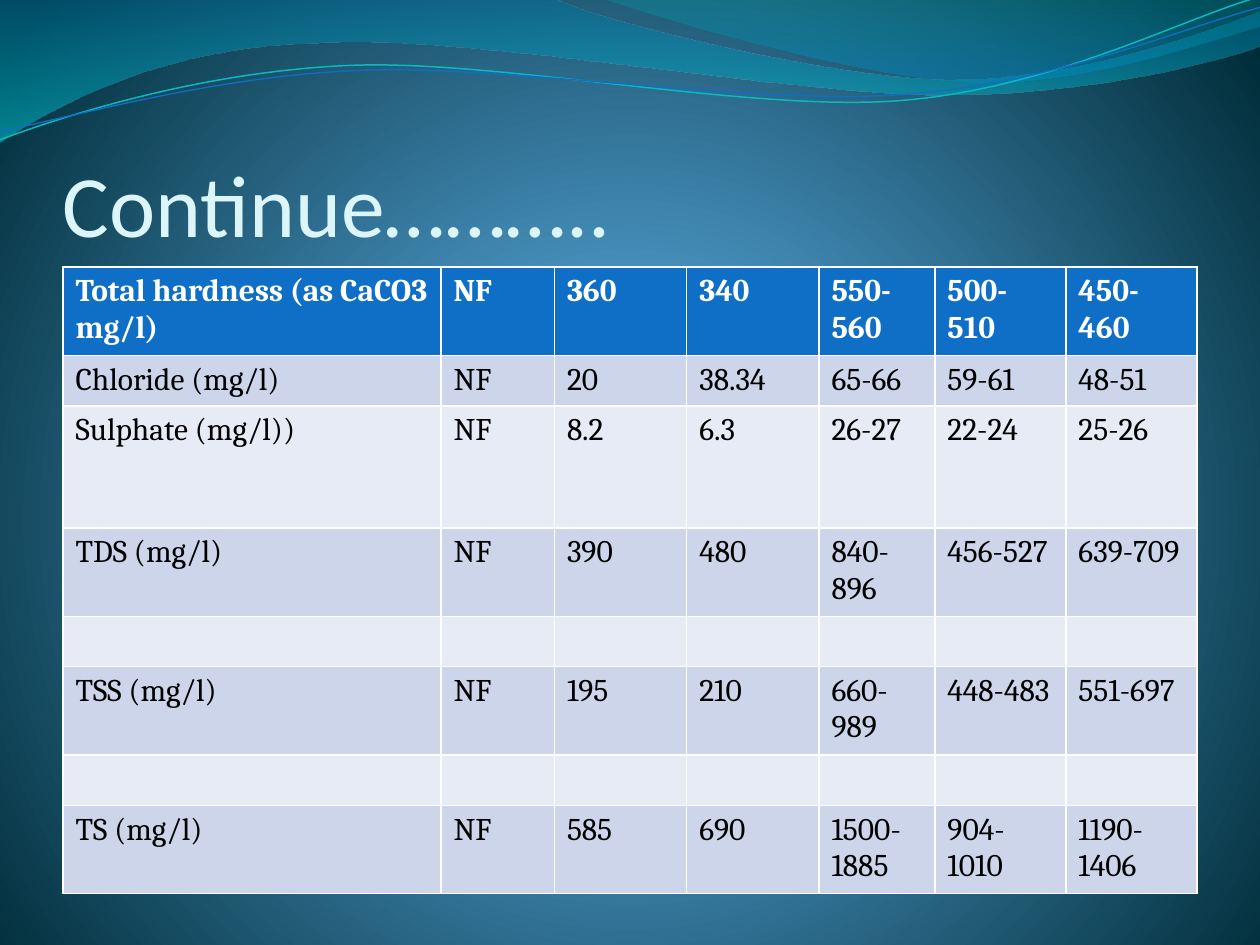
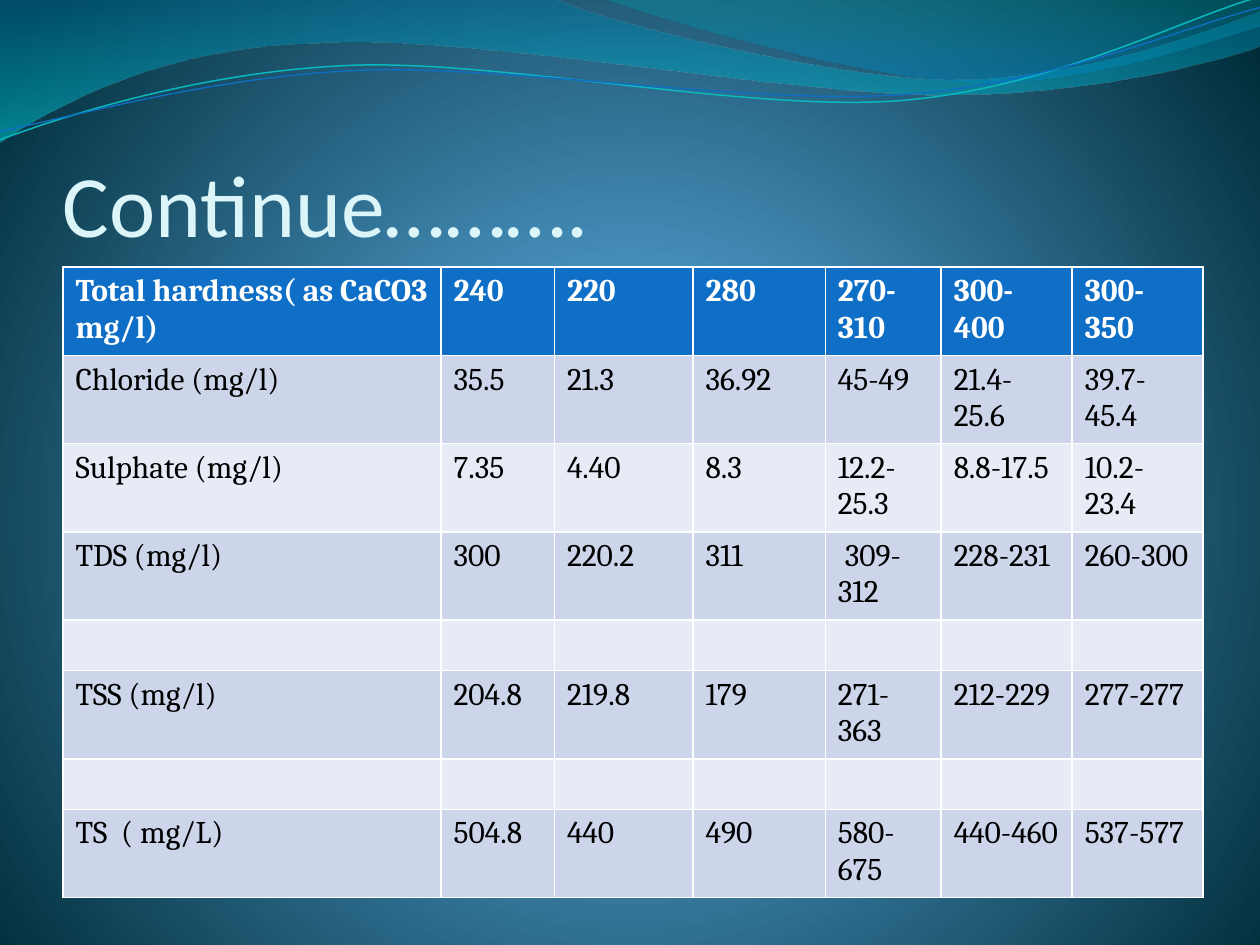
from dataclasses import dataclass
from math import cos, radians, sin
from typing import NamedTuple

from lxml import etree
from pptx import Presentation, util as u
from pptx.dml.color import RGBColor
from pptx.enum import text
from pptx.oxml.ns import qn

WHITE, BLACK, BLUE = "FFFFFF", "000000", "0F6FC6"
BANDS = ("CCD5EA", "E7EBF5")
TITLE = {"size": u.Pt(50), "name": "Calibri", "bold": False}
HEAD = {"size": u.Pt(18), "name": "Cambria", "bold": True}
BODY = HEAD | {"bold": False}
TALL, LOW = 0.67, 0.4
TILT = 2.7
PIVOT = (5, 0.58)


class Stop(NamedTuple):
    pos: int
    color: str
    alpha: int = 100


@dataclass
class Wave:
    """Steps hold two numbers for a straight line, six for a Bezier curve."""
    start: tuple
    steps: list
    stops: tuple = ()
    color: str = ""
    width: float = 0


@dataclass
class Page:
    title: str
    cols: list
    heights: list
    rows: list


GLOW = (Stop(0, "4AA0D6"), Stop(25, "4C98C7"), Stop(100, "002C38"))
WAVES = [
    Wave((0, 0), [(4.4, -0.01), (4.76, 0.17, 6.64, 0.63, 7.58, 0.63),
                  (8.53, 0.63, 9.58, 0.26, 10, 0.09), (10.01, 0.36),
                  (9.83, 0.44, 8.7, 0.76, 7.46, 0.75),
                  (6.22, 0.75, 3.82, 0.28, 2.57, 0.34),
                  (1.29, 0.36, 0.46, 0.83, -0.01, 1.13), (0, 0)],
         (Stop(0, "0074A1", 45), Stop(100, "00C6CF", 55))),
    Wave((4.79, -0.01), [(5.09, 0.11, 6.82, 0.62, 7.69, 0.65),
                         (8.56, 0.69, 9.61, 0.32, 10, 0.21), (10, 0),
                         (4.79, -0.01)],
         (Stop(0, "00A1A9", 30), Stop(80, "008BBF", 45))),
    Wave((0, 1.11), [(0.48, 0.93, 1.58, 0.57, 2.77, 0.52),
                     (3.95, 0.47, 5.93, 0.89, 7.13, 0.8),
                     (8.33, 0.71, 9.38, 0.15, 9.98, -0.02)],
         color="0AB8BF", width=0.85),
    Wave((0, 1.04), [(0.47, 0.96, 1.64, 0.61, 2.83, 0.56),
                     (4.03, 0.51, 5.97, 0.84, 7.17, 0.75),
                     (8.36, 0.67, 9.41, 0.21, 10, 0.06)],
         color=BLUE, width=0.75),
]
PAGES = [
    Page("Continue………..", [3, 0.9, 1.05, 1.05, 0.92, 1.04, 1.04],
         [TALL, LOW, 0.97, TALL, LOW, TALL, LOW, TALL],
         ["Total hardness (as CaCO3 mg/l)|NF|360|340|550-560|500-510|450-460",
          "Chloride (mg/l)|NF|20|38.34|65-66|59-61|48-51",
          "Sulphate (mg/l))|NF|8.2|6.3|26-27|22-24|25-26",
          "TDS (mg/l)|NF|390|480|840-896|456-527|639-709",
          "",
          "TSS (mg/l)|NF|195|210|660-989|448-483|551-697",
          "",
          "TS (mg/l)|NF|585|690|1500-1885|904-1010|1190-1406"]),
    Page("Continue……….", [3, 0.9, 1.1, 1.05, 0.92, 1.04, 1.04],
         [TALL, TALL, TALL, TALL, LOW, TALL, LOW, TALL],
         ["Total hardness( as CaCO3 mg/l)|240|220|280|270-310|300-400|300-350",
          "Chloride (mg/l)|35.5|21.3|36.92|45-49|21.4-25.6|39.7-45.4",
          "Sulphate (mg/l)|7.35|4.40|8.3|12.2-25.3|8.8-17.5|10.2-23.4",
          "TDS (mg/l)|300|220.2|311| 309-312|228-231|260-300",
          "",
          "TSS (mg/l)|204.8|219.8|179|271-363|212-229|277-277",
          "",
          "TS  ( mg/L)|504.8|440|490|580-675|440-460|537-577"]),
]


def rgb(code: str) -> RGBColor:
    return RGBColor.from_string(code)


def node(parent, tag: str, **attrs):
    return etree.SubElement(parent, qn(tag), {k: str(v) for k, v in attrs.items()})


def blend(fill, owner, stops: tuple, radial: bool = False) -> None:
    """Give the fill inside owner a gradient, downward or from a centre."""
    fill.gradient()
    grad = owner.find(f".//{qn('a:gradFill')}")
    grad.clear()
    group = node(grad, "a:gsLst")
    for stop in stops:
        mark = node(group, "a:gs", pos=stop.pos * 1000)
        color = node(mark, "a:srgbClr", val=stop.color)
        if stop.alpha < 100:
            node(color, "a:alpha", val=stop.alpha * 1000)
    if radial:
        ring = node(grad, "a:path", path="circle")
        node(ring, "a:fillToRect", l=10000, t=110000, r=10000, b=100000)
    else:
        node(grad, "a:lin", ang=5400000, scaled=1)


def spin(spot: tuple, angle: float) -> tuple:
    """Turn a point clockwise about the pivot."""
    dx, dy = spot[0] - PIVOT[0], spot[1] - PIVOT[1]
    c, s = cos(radians(angle)), sin(radians(angle))
    return PIVOT[0] + dx * c - dy * s, PIVOT[1] + dx * s + dy * c


def bend(shape, steps: list) -> None:
    """Merge the three straight segments of each curved step into a Bezier."""
    lines = iter(shape._element.findall(f".//{qn('a:lnTo')}"))
    for step in steps:
        first = next(lines)
        if len(step) == 6:
            first.tag = qn("a:cubicBezTo")
            for line in (next(lines), next(lines)):
                first.append(line[0])
                line.getparent().remove(line)


def add_wave(slide, wave: Wave) -> None:
    tilt = 0 if wave.stops else TILT
    spots = [wave.start] + [step[i:i + 2] for step in wave.steps
                            for i in range(0, len(step), 2)]
    first, *rest = [tuple(map(u.Inches, spin(spot, tilt))) for spot in spots]
    pen = slide.shapes.build_freeform(*first)
    pen.add_line_segments(rest, close=bool(wave.stops))
    shape = pen.convert_to_shape()
    curve(shape, wave)
    shape.rotation = -tilt
    shape.shadow.inherit = False
    if wave.stops:
        blend(shape.fill, shape._element, wave.stops)
        shape.line.fill.background()
    else:
        shape.fill.background()
        shape.line.color.rgb = rgb(wave.color)
        shape.line.width = u.Pt(wave.width)


def curve(shape, wave: Wave) -> None:
    """Rebuild the outline commands of the shape, keeping its points."""
    outline = shape._element.find(f".//{qn('a:pathLst')}")[0]
    lines = iter(outline.findall(qn("a:lnTo")))
    end = outline.find(qn("a:close"))
    for step in wave.steps:
        group = [next(lines) for _ in range(len(step) // 2)]
        if len(group) == 3:
            bow = node(outline, "a:cubicBezTo")
            group[0].addprevious(bow)
            for line in group:
                bow.append(line[0])
                outline.remove(line)
    if end is not None:
        outline.append(end)


def write(frame, words: str, style: dict, color: str) -> None:
    run = frame.paragraphs[0].add_run()
    run.text = words
    for key, value in style.items():
        setattr(run.font, key, value)
    run.font.color.rgb = rgb(color)


def add_title(slide, words: str) -> None:
    box = slide.shapes.add_textbox(*map(u.Inches, (0.5, 0.77, 9, 1.25)))
    form = {"word_wrap": True, "vertical_anchor": text.MSO_ANCHOR.BOTTOM,
            "margin_left": 0, "margin_right": 0, "margin_bottom": 0,
            "margin_top": u.Inches(0.05)}
    for key, value in form.items():
        setattr(box.text_frame, key, value)
    write(box.text_frame, words, TITLE, "DBF5F9")


def add_grid(slide, page: Page) -> None:
    size = (0.5, 2.12, sum(page.cols), sum(page.heights))
    grid = slide.shapes.add_table(len(page.rows), len(page.cols),
                                  *map(u.Inches, size)).table
    for col, width in zip(grid.columns, page.cols):
        col.width = u.Inches(width)
    for r, (height, line) in enumerate(zip(page.heights, page.rows)):
        grid.rows[r].height = u.Inches(height)
        words = line.split("|") if line else [""] * len(page.cols)
        for c, word in enumerate(words):
            cell = grid.cell(r, c)
            cell.fill.solid()
            cell.fill.fore_color.rgb = rgb(BANDS[(r - 1) % 2] if r else BLUE)
            if word:
                write(cell.text_frame, word, BODY if r else HEAD, BLACK if r else WHITE)


def add_page(deck, page: Page) -> None:
    slide = deck.slides.add_slide(deck.slide_layouts[6])
    blend(slide.background.fill, slide._element, GLOW, radial=True)
    for wave in WAVES:
        add_wave(slide, wave)
    add_title(slide, page.title)
    add_grid(slide, page)


def main() -> None:
    deck = Presentation()
    deck.slide_width, deck.slide_height = u.Inches(10), u.Inches(7.5)
    for page in PAGES:
        add_page(deck, page)
    deck.save("out.pptx")


if __name__ == "__main__":
    main()
